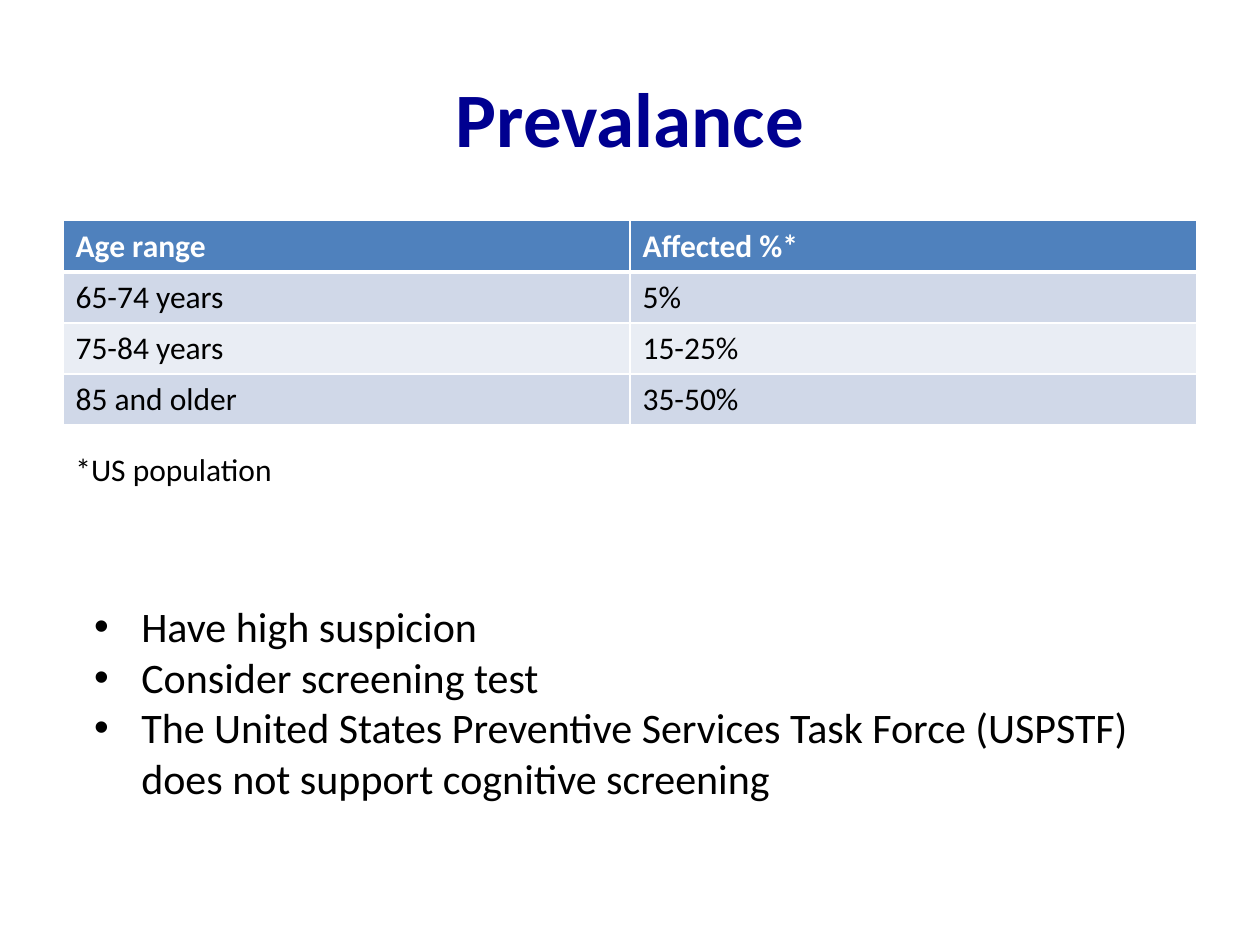
from lxml.etree import SubElement
from pptx import Presentation
from pptx.dml.color import RGBColor
from pptx.enum.text import MSO_ANCHOR, MSO_AUTO_SIZE, PP_ALIGN
from pptx.oxml.ns import qn
from pptx.util import Cm, Pt

FONT = "Calibri"
COLORS = {
    "title": "000090",
    "text": "000000",
    "white": "FFFFFF",
    "header": "4F81BD",
    "odd row": "D0D8E8",
    "even row": "E9EDF4",
}
TITLE = "Prevalance"
PREVALENCE = [
    ("Age range", "Affected %*"),
    ("65-74 years", "5%"),
    ("75-84 years", "15-25%"),
    ("85 and older", "35-50%"),
]
FOOTNOTE = "*US population"
ADVICE = [
    "Have high suspicion",
    "Consider screening test",
    "The United States Preventive Services Task Force (USPSTF) "
    "does not support cognitive screening",
]

MARGIN, CONTENT_WIDTH = 1.27, 22.86
ROW_HEIGHT = 1.03
BULLET_INDENT = Cm(0.95)


def style(paragraph, size, color="text", bold=False):
    for run in paragraph.runs:
        run.font.name = FONT
        run.font.size = Pt(size)
        run.font.bold = bold
        run.font.color.rgb = RGBColor.from_string(COLORS[color])


def add_text(slide, box, lines, size, color="text", bold=False, wrap=True):
    shape = slide.shapes.add_textbox(*map(Cm, box))
    frame = shape.text_frame
    frame.text = "\n".join(lines)
    frame.word_wrap = wrap
    for paragraph in frame.paragraphs:
        style(paragraph, size, color, bold)
    return frame


def add_bullet(paragraph):
    properties = paragraph._p.get_or_add_pPr()
    properties.set("marL", str(BULLET_INDENT))
    properties.set("indent", str(-BULLET_INDENT))
    SubElement(properties, qn("a:buFont"), typeface="Arial")
    SubElement(properties, qn("a:buChar"), char="•")


def set_borders(cell, bottom_width):
    """Draw white cell borders; they must precede the fill in the XML."""
    properties = cell._tc.get_or_add_tcPr()
    for side, width in (("L", 1), ("R", 1), ("T", 1), ("B", bottom_width)):
        line = SubElement(properties, qn(f"a:ln{side}"), w=str(Pt(width)))
        fill = SubElement(line, qn("a:solidFill"))
        SubElement(fill, qn("a:srgbClr"), val=COLORS["white"])


def add_prevalence_table(slide):
    row_count, column_count = len(PREVALENCE), len(PREVALENCE[0])
    table = slide.shapes.add_table(
        row_count, column_count, Cm(MARGIN), Cm(4.45),
        Cm(CONTENT_WIDTH), Cm(ROW_HEIGHT * row_count),
    ).table
    for row, values in enumerate(PREVALENCE):
        is_header = row == 0
        fill = "header" if is_header else "odd row" if row % 2 else "even row"
        for column, value in enumerate(values):
            cell = table.cell(row, column)
            cell.text = value
            style(cell.text_frame.paragraphs[0], 18,
                  "white" if is_header else "text", is_header)
            set_borders(cell, 3 if is_header else 1)
            cell.fill.solid()
            cell.fill.fore_color.rgb = RGBColor.from_string(COLORS[fill])


def main():
    presentation = Presentation()
    presentation.slide_width, presentation.slide_height = Cm(25.4), Cm(19.05)
    slide = presentation.slides.add_slide(presentation.slide_layouts[6])

    title = add_text(slide, (MARGIN, 0.76, CONTENT_WIDTH, 3.18), [TITLE],
                     44, "title", bold=True)
    title.vertical_anchor = MSO_ANCHOR.MIDDLE
    title.paragraphs[0].alignment = PP_ALIGN.CENTER

    add_prevalence_table(slide)

    footnote = add_text(slide, (MARGIN, 8.94, 4.52, 1.03), [FOOTNOTE], 18, wrap=False)
    advice = add_text(slide, (1.65, 11.99, 22.28, 4.37), ADVICE, 24)
    for frame in (footnote, advice):
        frame.auto_size = MSO_AUTO_SIZE.SHAPE_TO_FIT_TEXT
    for paragraph in advice.paragraphs:
        add_bullet(paragraph)

    presentation.save("out.pptx")


if __name__ == "__main__":
    main()
